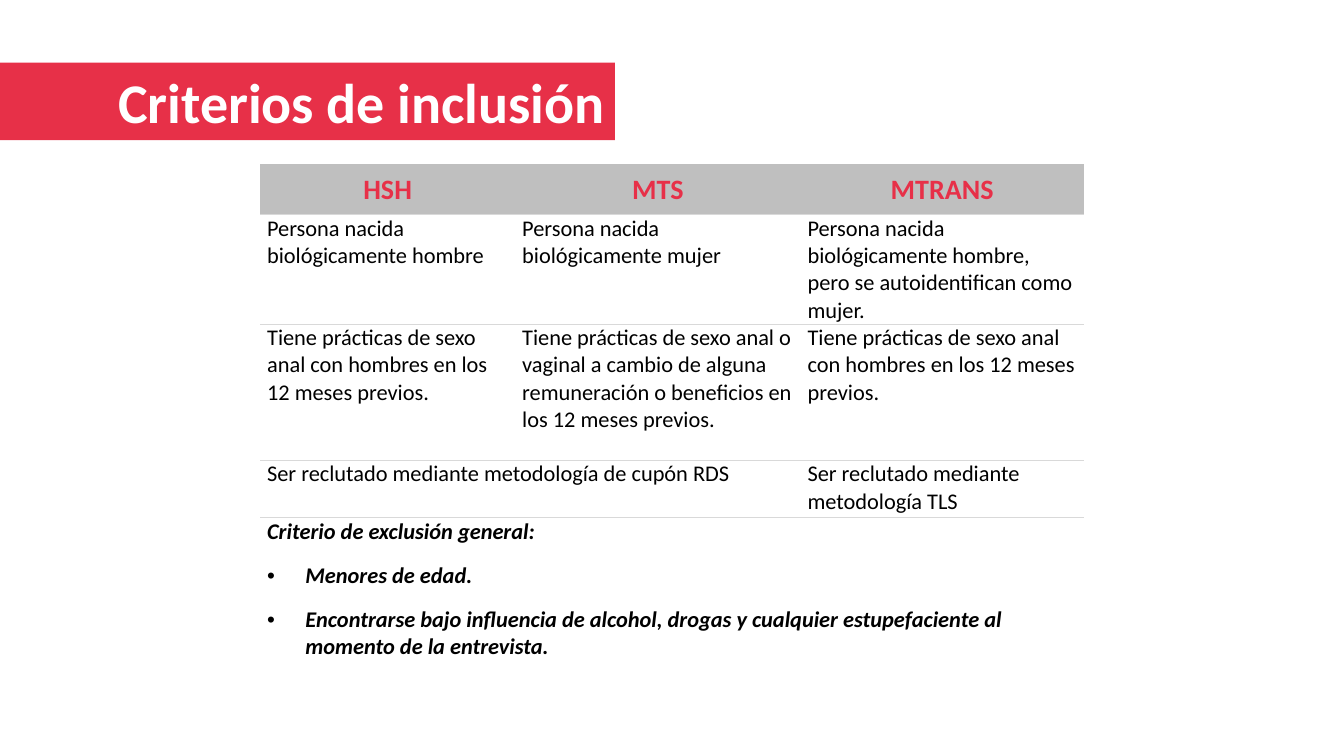
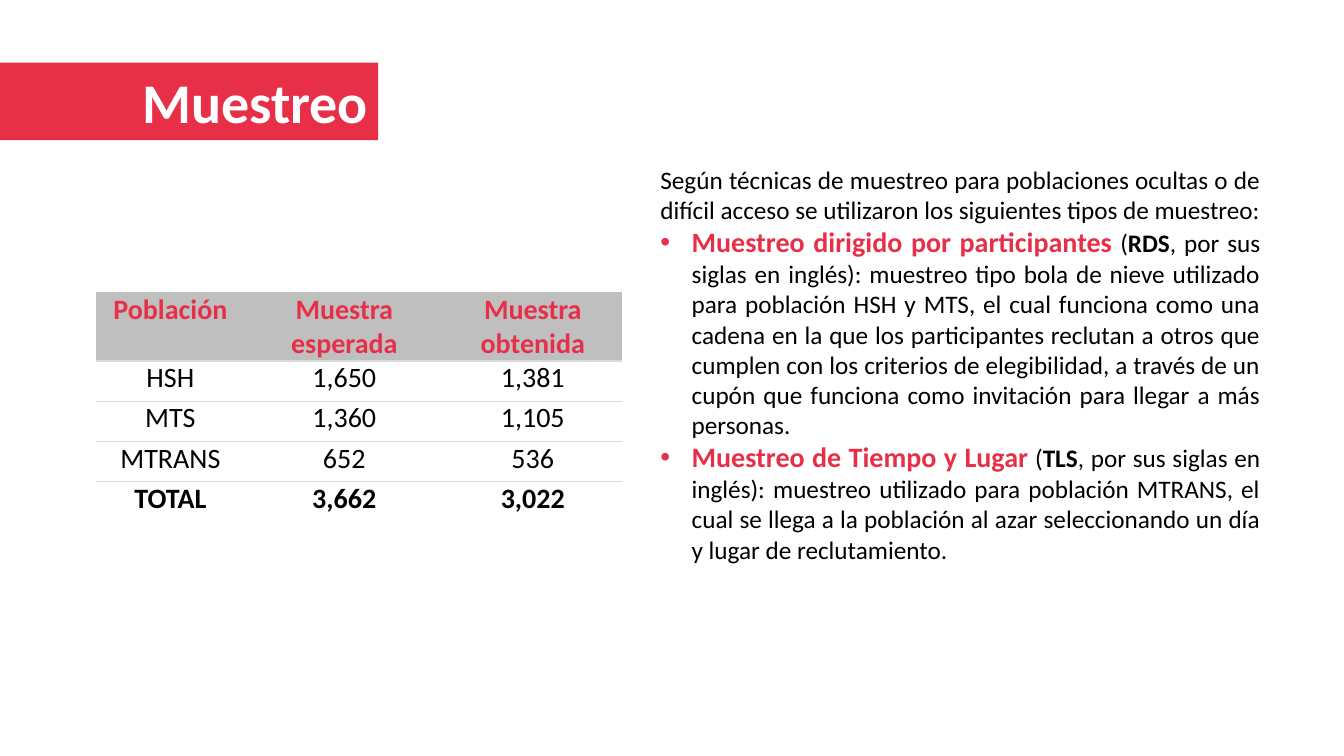
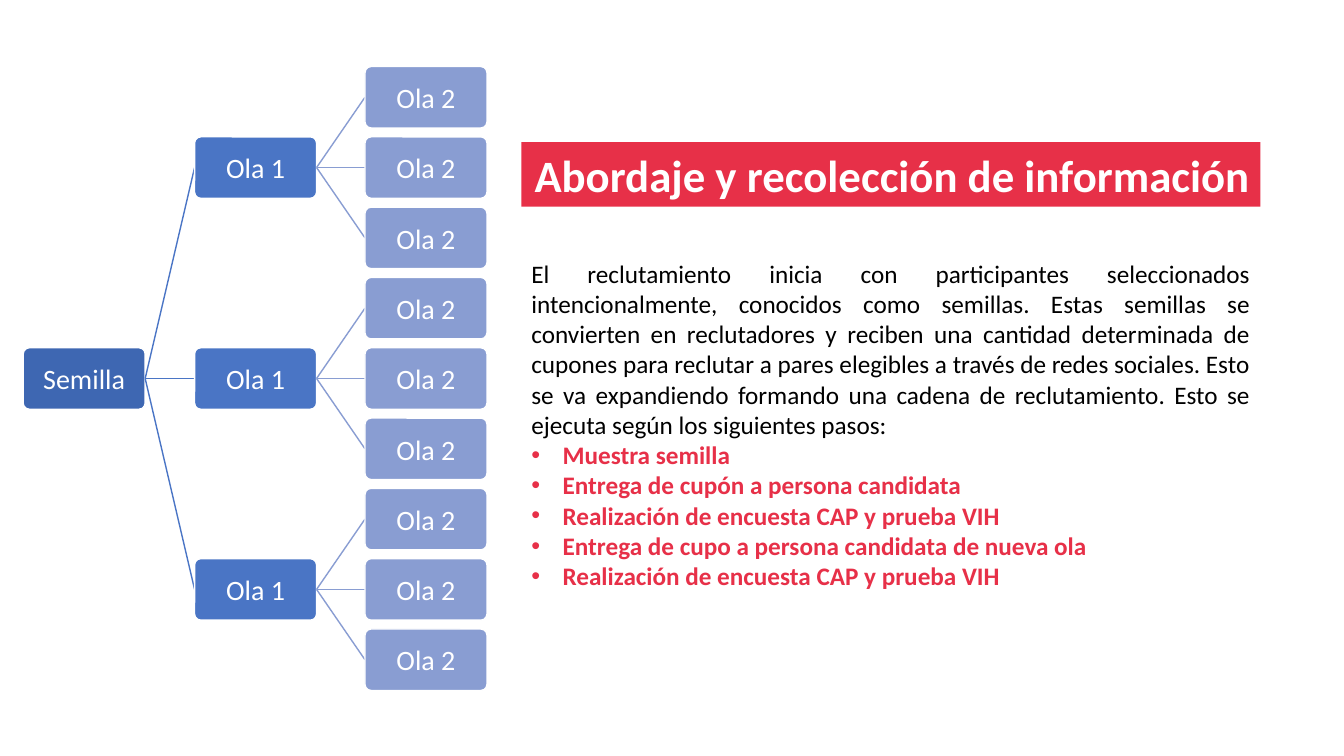
from dataclasses import dataclass, replace
from typing import Any, NamedTuple, Optional

from lxml import etree
from pptx import Presentation
from pptx import util as u
from pptx.dml.color import RGBColor
from pptx.enum import shapes, text
from pptx.oxml import ns

RED = RGBColor(0xE7, 0x30, 0x48)
BLACK = RGBColor(0x00, 0x00, 0x00)
WHITE = RGBColor(0xFF, 0xFF, 0xFF)
HEADER_GREY = RGBColor(0xBF, 0xBF, 0xBF)
RULE_GREY = RGBColor(0xD9, 0xD9, 0xD9)
SEED_BLUE = RGBColor(0x3E, 0x67, 0xB2)
WAVE1_BLUE = RGBColor(0x4A, 0x75, 0xC5)
WAVE2_BLUE = RGBColor(0x89, 0x9D, 0xD2)
FONT = "Calibri"
TITLE_ONLY, TITLE_AND_BODY = 5, 1
CENTER = text.PP_ALIGN.CENTER
LEFT = text.PP_ALIGN.LEFT
RIGHT = text.PP_ALIGN.RIGHT
JUSTIFY = text.PP_ALIGN.JUSTIFY


class Box(NamedTuple):
    left: float
    top: float
    width: float
    height: float

    def lengths(self) -> list[int]:
        return [u.Inches(side) for side in self]


class Run(NamedTuple):
    words: str
    size: float = 18
    color: RGBColor = BLACK
    bold: bool = False
    italic: bool = False


@dataclass(frozen=True)
class Para:
    runs: tuple[Run, ...]
    align: Any = JUSTIFY
    indent: float = 0
    gap: float = 0


@dataclass(frozen=True)
class Grid:
    left: float
    top: float
    widths: tuple[float, ...]
    heights: tuple[float, ...]
    rows: list[list[Optional[list[Para]]]]
    header_anchor: Any = text.MSO_ANCHOR.TOP


@dataclass(frozen=True)
class Node:
    label: str
    left: float
    row: int
    color: RGBColor
    parent: Optional["Node"] = None

    @property
    def box(self) -> Box:
        return Box(self.left, TREE_TOP + self.row * ROW_PITCH, NODE_WIDTH, NODE_HEIGHT)

    @property
    def middle(self) -> float:
        return self.box.top + NODE_HEIGHT / 2


TREE_TOP, TREE_LAST = 0.66, 6.24
ROW_PITCH = (TREE_LAST - TREE_TOP) / 8
NODE_WIDTH, NODE_HEIGHT = 1.21, 0.61
SEED_LEFT, WAVE1_LEFT, WAVE2_LEFT = 0.23, 1.93, 3.62


def assign(target: Any, formats: dict[str, Any]) -> None:
    for attribute, value in formats.items():
        setattr(target, attribute, value)


def place(shape: Any, box: Box) -> None:
    assign(shape, dict(zip(("left", "top", "width", "height"), box.lengths())))


def set_bullet(paragraph: Any, indent: float) -> None:
    props = paragraph._p.get_or_add_pPr()
    props.set("marL", str(u.Inches(indent)))
    props.set("indent", str(-u.Inches(indent)))
    if indent:
        etree.SubElement(props, ns.qn("a:buFont"), typeface="Arial")
        etree.SubElement(props, ns.qn("a:buChar"), char="•")
    else:
        etree.SubElement(props, ns.qn("a:buNone"))


def write(frame: Any, paras: list[Para]) -> None:
    for index, para in enumerate(paras):
        paragraph = frame.add_paragraph() if index else frame.paragraphs[0]
        assign(paragraph, {
            "alignment": para.align,
            "space_before": u.Pt(para.gap),
            "space_after": u.Pt(para.gap),
        })
        set_bullet(paragraph, para.indent)
        for part in para.runs:
            run = paragraph.add_run()
            run.text = part.words
            assign(run.font, {
                "name": FONT,
                "size": u.Pt(part.size),
                "bold": part.bold,
                "italic": part.italic,
            })
            run.font.color.rgb = part.color


def add_slide(deck: Any, layout: int, title: str, band: Box, size: float = 40) -> Any:
    slide = deck.slides.add_slide(deck.slide_layouts[layout])
    heading = slide.shapes.title
    place(heading, band)
    heading.fill.solid()
    heading.fill.fore_color.rgb = RED
    assign(heading.text_frame, {"word_wrap": True, "auto_size": text.MSO_AUTO_SIZE.NONE})
    write(heading.text_frame, [Para((Run(title, size, WHITE, True),), RIGHT)])
    return slide


def fill_body(slide: Any, box: Box, paras: list[Para]) -> None:
    body = slide.placeholders[1]
    place(body, box)
    assign(body.text_frame, {"word_wrap": True, "auto_size": text.MSO_AUTO_SIZE.NONE})
    write(body.text_frame, paras)


def set_borders(cell: Any, ruled: dict[str, bool]) -> None:
    props = cell._tc.get_or_add_tcPr()
    for side in ("L", "R", "T", "B"):
        line = etree.SubElement(props, ns.qn(f"a:ln{side}"), w=str(u.Pt(1)))
        if ruled.get(side):
            fill = etree.SubElement(line, ns.qn("a:solidFill"))
            etree.SubElement(fill, ns.qn("a:srgbClr"), val=str(RULE_GREY))
        else:
            etree.SubElement(line, ns.qn("a:noFill"))


def add_grid(slide: Any, grid: Grid) -> None:
    box = Box(grid.left, grid.top, sum(grid.widths), sum(grid.heights))
    table = slide.shapes.add_table(len(grid.rows), len(grid.widths), *box.lengths()).table
    assign(table, {"first_row": False, "horz_banding": False})
    for column, width in zip(table.columns, grid.widths):
        column.width = u.Inches(width)
    last = len(grid.rows) - 1
    for r, (entries, height) in enumerate(zip(grid.rows, grid.heights)):
        table.rows[r].height = u.Inches(height)
        for c, paras in enumerate(entries):
            cell = table.cell(r, c)
            set_borders(cell, {"T": r > 0, "B": r < last})
            assign(cell, {
                "margin_left": u.Inches(0.07),
                "margin_right": u.Inches(0.07),
                "margin_top": 0,
                "margin_bottom": 0,
                "vertical_anchor": text.MSO_ANCHOR.TOP if r else grid.header_anchor,
            })
            if r:
                cell.fill.background()
            else:
                cell.fill.solid()
                cell.fill.fore_color.rgb = HEADER_GREY
            if paras:
                write(cell.text_frame, paras)
        for c, paras in enumerate(entries):
            following = [i for i in range(c + 1, len(entries)) if entries[i] is not None]
            end = (following[0] if following else len(entries)) - 1
            if paras and end > c:
                table.cell(r, c).merge(table.cell(r, end))


def heads(*labels: str) -> list[list[Para]]:
    return [[Para((Run(label, 20, RED, True),), CENTER, gap=6)] for label in labels]


def criteria(*sentences: Optional[str]) -> list[Optional[list[Para]]]:
    return [s and [Para((Run(s, 16),), LEFT, gap=6)] for s in sentences]


def figures(*values: str, bold: bool = False) -> list[list[Para]]:
    return [[Para((Run(value, 20, bold=bold),), CENTER, gap=6)] for value in values]


def technique(name: str, acronym: str, detail: str) -> Para:
    return Para(
        (Run(name, 20, RED, True), Run(" ("), Run(acronym, bold=True), Run(detail)),
        indent=0.31,
    )


def add_link(slide: Any, node: Node) -> None:
    ends = (node.parent.left + NODE_WIDTH, node.parent.middle, node.left, node.middle)
    link = slide.shapes.add_connector(
        shapes.MSO_CONNECTOR.STRAIGHT, *[u.Inches(end) for end in ends]
    )
    link.line.color.rgb = node.color
    link.line.width = u.Pt(1)
    etree.SubElement(link._element.spPr, ns.qn("a:effectLst"))


def add_node(slide: Any, node: Node) -> None:
    card = slide.shapes.add_shape(shapes.MSO_SHAPE.ROUNDED_RECTANGLE, *node.box.lengths())
    card.adjustments[0] = 0.1
    card.shadow.inherit = False
    card.fill.solid()
    card.fill.fore_color.rgb = node.color
    card.line.color.rgb = WHITE
    card.line.width = u.Pt(1)
    inset = u.Inches(0.03)
    assign(card.text_frame, {
        "word_wrap": True,
        "vertical_anchor": text.MSO_ANCHOR.MIDDLE,
        "margin_left": inset,
        "margin_right": inset,
        "margin_top": inset,
        "margin_bottom": inset,
    })
    write(card.text_frame, [Para((Run(node.label, 20, WHITE),), CENTER)])


def recruitment_tree() -> list[Node]:
    seed = Node("Semilla", SEED_LEFT, 4, SEED_BLUE)
    nodes = [seed]
    for row in (1, 4, 7):
        wave1 = Node("Ola 1", WAVE1_LEFT, row, WAVE1_BLUE, seed)
        nodes.append(wave1)
        nodes += [
            Node("Ola 2", WAVE2_LEFT, row + step, WAVE2_BLUE, wave1) for step in (-1, 0, 1)
        ]
    return nodes


def inclusion_slide(deck: Any) -> None:
    slide = add_slide(deck, TITLE_ONLY, "Criterios de inclusión", Box(0, 0.62, 6.1, 0.77))
    exclusion = Para((Run("Criterio de exclusión general:", 16, BLACK, True, True),), LEFT, gap=6)
    exclusions = [exclusion] + [
        replace(exclusion, runs=(exclusion.runs[0]._replace(words=words),), indent=0.38)
        for words in (
            "Menores de edad.",
            "Encontrarse bajo influencia de alcohol, drogas y cualquier estupefaciente "
            "al momento de la entrevista.",
        )
    ]
    anal_sex = "Tiene prácticas de sexo anal con hombres en los 12 meses previos."
    add_grid(slide, Grid(
        2.58, 1.63, (2.53, 2.83, 2.81), (0.5, 1.08, 1.35, 0.57, 1.39),
        [
            heads("HSH", "MTS", "MTRANS"),
            criteria(
                "Persona nacida biológicamente hombre",
                "Persona nacida biológicamente mujer",
                "Persona nacida biológicamente hombre, pero se autoidentifican como mujer.",
            ),
            criteria(
                anal_sex,
                "Tiene prácticas de sexo anal o vaginal a cambio de alguna remuneración "
                "o beneficios en los 12 meses previos.",
                anal_sex,
            ),
            criteria(
                "Ser reclutado mediante metodología de cupón RDS",
                None,
                "Ser reclutado mediante metodología TLS",
            ),
            [exclusions, None, None],
        ],
        text.MSO_ANCHOR.MIDDLE,
    ))


def sampling_slide(deck: Any) -> None:
    slide = add_slide(deck, TITLE_AND_BODY, "Muestreo", Box(0, 0.62, 3.75, 0.77))
    add_grid(slide, Grid(
        0.95, 2.9, (1.48, 1.97, 1.77), (0.68, 0.4, 0.4, 0.4, 0.4),
        [
            heads("Población", "Muestra esperada", "Muestra obtenida"),
            figures("HSH", "1,650", "1,381"),
            figures("MTS", "1,360", "1,105"),
            figures("MTRANS", "652", "536"),
            figures("TOTAL", "3,662", "3,022", bold=True),
        ],
    ))
    fill_body(slide, Box(6.45, 1.58, 6.15, 4.41), [
        Para((Run(
            "Según técnicas de muestreo para poblaciones ocultas o de difícil acceso "
            "se utilizaron los siguientes tipos de muestreo:"
        ),)),
        technique(
            "Muestreo dirigido por participantes", "RDS",
            ", por sus siglas en inglés): muestreo tipo bola de nieve utilizado para población "
            "HSH y MTS, el cual funciona como una cadena en la que los participantes reclutan "
            "a otros que cumplen con los criterios de elegibilidad, a través de un cupón que "
            "funciona como invitación para llegar a más personas.",
        ),
        technique(
            "Muestreo de Tiempo y Lugar", "TLS",
            ", por sus siglas en inglés): muestreo utilizado para población MTRANS, el cual "
            "se llega a la población al azar seleccionando un día y lugar de reclutamiento.",
        ),
    ])


def fieldwork_slide(deck: Any) -> None:
    slide = add_slide(
        deck, TITLE_AND_BODY, "Abordaje y recolección de información",
        Box(5.17, 1.41, 7.33, 0.64), 32,
    )
    survey = "Realización de encuesta CAP y prueba VIH"
    steps = (
        "Muestra semilla",
        "Entrega de cupón a persona candidata",
        survey,
        "Entrega de cupo a persona candidata de nueva ola",
        survey,
    )
    fill_body(slide, Box(5.17, 2.51, 7.33, 3.66), [
        Para((Run(
            "El reclutamiento inicia con participantes seleccionados intencionalmente, "
            "conocidos como semillas. Estas semillas se convierten en reclutadores y reciben "
            "una cantidad determinada de cupones para reclutar a pares elegibles a través de "
            "redes sociales. Esto se va expandiendo formando una cadena de reclutamiento. "
            "Esto se ejecuta según los siguientes pasos:"
        ),)),
        *[Para((Run(step, color=RED, bold=True),), indent=0.31) for step in steps],
    ])
    for node in recruitment_tree():
        if node.parent:
            add_link(slide, node)
        add_node(slide, node)


def main() -> None:
    deck = Presentation()
    assign(deck, {"slide_width": u.Inches(13.33), "slide_height": u.Inches(7.5)})
    inclusion_slide(deck)
    sampling_slide(deck)
    fieldwork_slide(deck)
    deck.save("out.pptx")


if __name__ == "__main__":
    main()
